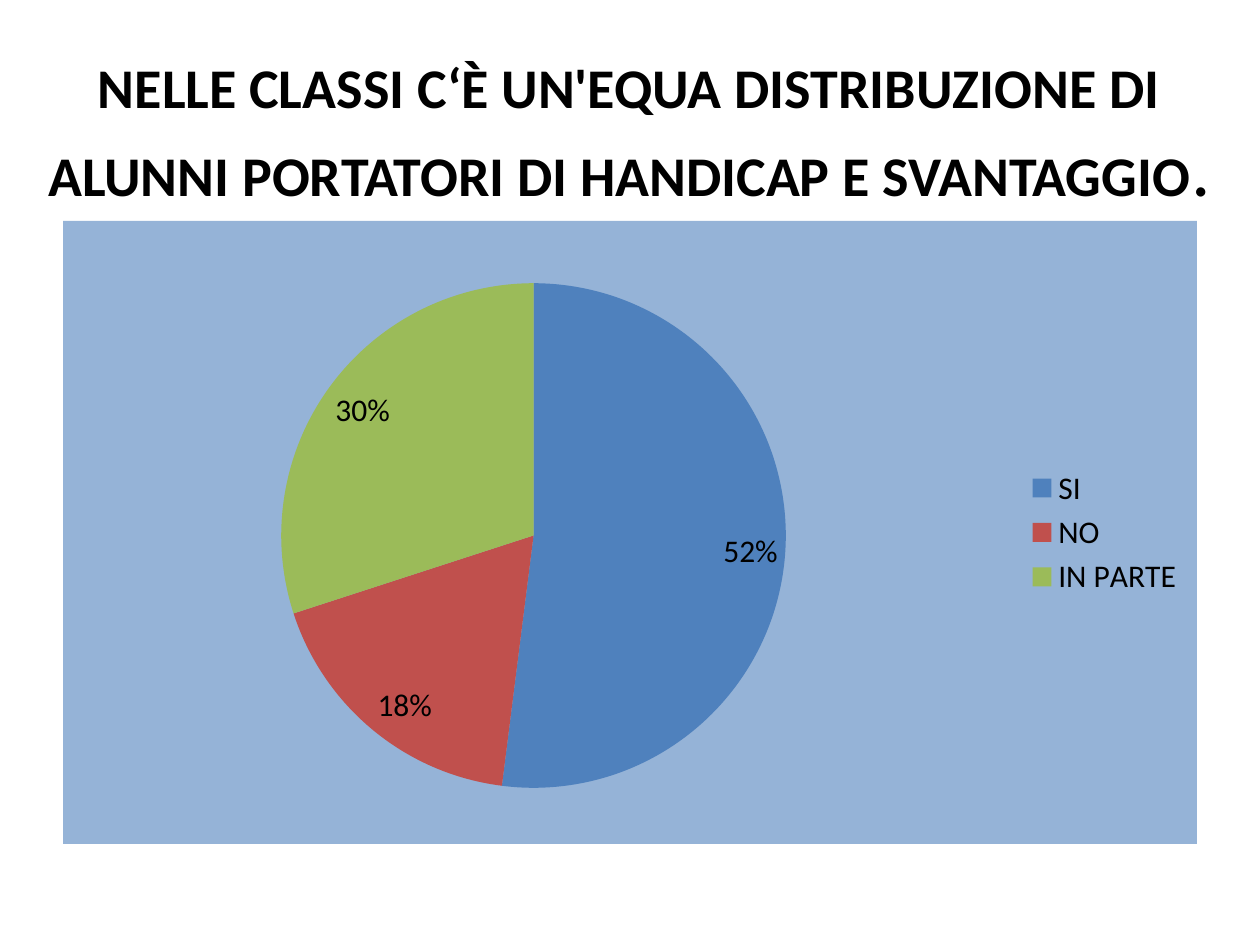
from lxml import etree
from pptx import Presentation
from pptx import util as u
from pptx.chart import data
from pptx.dml.color import RGBColor
from pptx.enum import chart as charts, text
from pptx.oxml import parse_xml
from pptx.oxml.ns import nsdecls, qn

PX = u.Inches(1) // 126
BLACK = RGBColor(0x00, 0x00, 0x00)
PANEL = RGBColor(0x95, 0xB3, 0xD7)
BLUE = RGBColor(0x4F, 0x81, 0xBD)
RED = RGBColor(0xC0, 0x50, 0x4D)
GREEN = RGBColor(0x9B, 0xBB, 0x59)
FONT = "Calibri"

presentation = Presentation()
presentation.slide_width = 1260 * PX
presentation.slide_height = 945 * PX
slide = presentation.slides.add_slide(presentation.slide_layouts[5])

# Title with a larger, lighter full stop
title = slide.shapes.title
title.left, title.top, title.width, title.height = 0, 26 * PX, 1259 * PX, 213 * PX
title.text_frame.vertical_anchor = text.MSO_ANCHOR.MIDDLE
paragraph = title.text_frame.paragraphs[0]
paragraph.alignment = text.PP_ALIGN.CENTER
for wording, size, bold in (
    ("NELLE CLASSI C‘È UN'EQUA DISTRIBUZIONE DI ALUNNI PORTATORI DI HANDICAP E SVANTAGGIO", 32, True),
    (".", 44, False),
):
    run = paragraph.add_run()
    run.text = wording
    run.font.name = FONT
    run.font.size = u.Pt(size)
    run.font.bold = bold
    run.font.color.rgb = BLACK

# Pie chart of the answers
answers = data.CategoryChartData(number_format="0%")
answers.categories = ["SI", "NO", "IN PARTE"]
answers.add_series("Series 1", (0.52, 0.18, 0.3))
chart = slide.shapes.add_chart(
    charts.XL_CHART_TYPE.PIE, 63 * PX, 221 * PX, 1134 * PX, 623 * PX, answers
).chart
chart.has_title = False
chart.font.name = FONT
chart.font.size = u.Pt(18)
chart.font.color.rgb = BLACK

# Slices and their labels
plot = chart.plots[0]
plot.vary_by_categories = True
for index, color in enumerate((BLUE, RED, GREEN)):
    fill = plot.series[0].points[index].format.fill
    fill.solid()
    fill.fore_color.rgb = color
plot.has_data_labels = True
labels = plot.data_labels
labels.show_value = True
labels.show_percentage = False
labels.number_format = "0%"
labels.number_format_is_linked = False
labels.position = charts.XL_LABEL_POSITION.INSIDE_END

# Legend
chart.has_legend = True
chart.legend.position = charts.XL_LEGEND_POSITION.RIGHT
chart.legend.include_in_layout = False

# Plot position, as shares of the chart
plot_area = chart._chartSpace.chart.plotArea
for old_layout in plot_area.findall(qn("c:layout")):
    plot_area.remove(old_layout)
layout = etree.Element(qn("c:layout"))
manual = etree.SubElement(layout, qn("c:manualLayout"))
for tag, value in (
    ("layoutTarget", "inner"), ("xMode", "edge"), ("yMode", "edge"),
    ("x", "0.19"), ("y", "0.1"), ("w", "0.45"), ("h", "0.81"),
):
    etree.SubElement(manual, qn("c:" + tag)).set("val", value)
plot_area.insert(0, layout)

# Chart background
background = parse_xml(
    f'<c:spPr {nsdecls("c", "a")}><a:solidFill><a:srgbClr val="{PANEL}"/></a:solidFill>'
    "<a:ln><a:noFill/></a:ln></c:spPr>"
)
chart._chartSpace.chart.addnext(background)

presentation.save("out.pptx")
